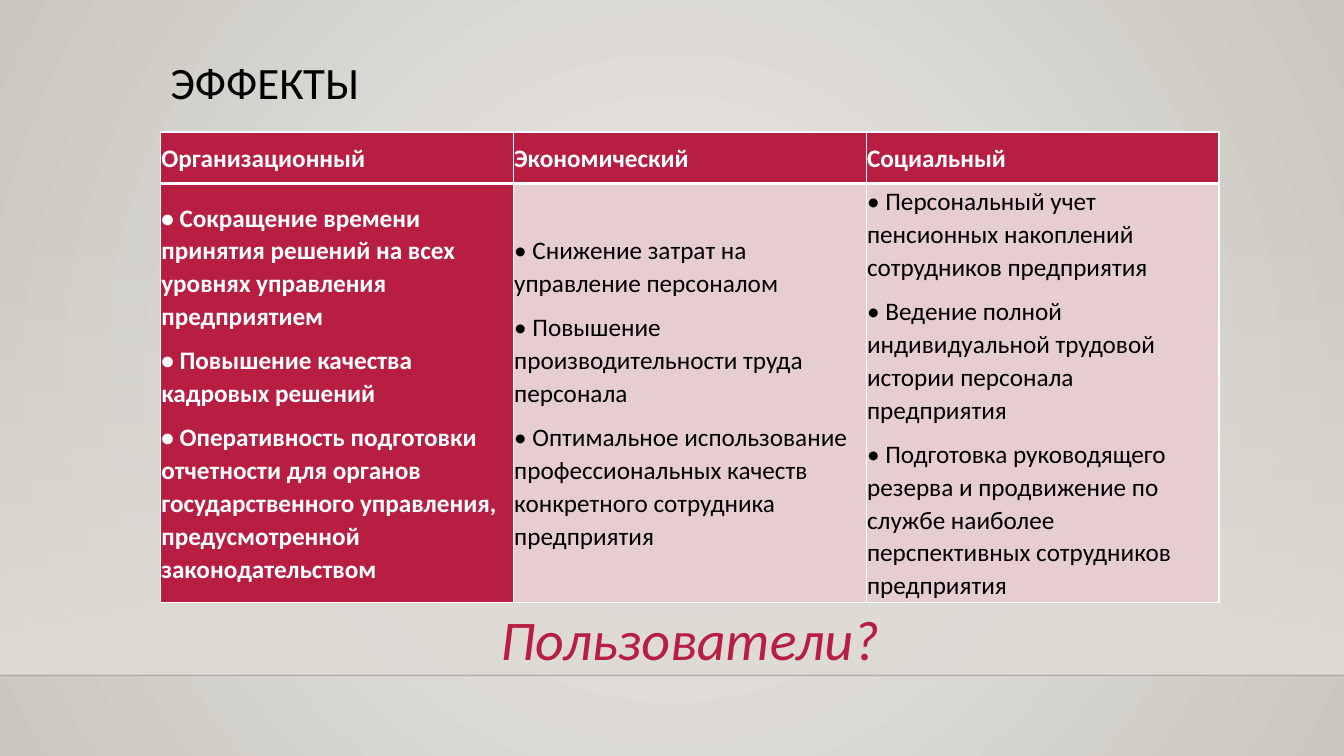
from dataclasses import dataclass

from lxml import etree
from pptx import Presentation
from pptx.dml.color import RGBColor
from pptx.enum.shapes import MSO_CONNECTOR, MSO_SHAPE
from pptx.enum.text import MSO_ANCHOR, MSO_AUTO_SIZE, PP_ALIGN
from pptx.oxml import parse_xml
from pptx.oxml.ns import nsdecls, qn
from pptx.util import Inches, Pt

CRIMSON = RGBColor(0xB7, 0x1E, 0x42)
ROSE = RGBColor(0xE6, 0xCD, 0xCF)
WHITE = RGBColor(0xFF, 0xFF, 0xFF)
BLACK = RGBColor(0, 0, 0)
FLOOR_LINE = RGBColor(0, 0, 1)
SAND = RGBColor(0xDF, 0xDB, 0xD5)
CENTRE_GREY = RGBColor(0xEC, 0xEA, 0xE7)
EDGE_GREY = RGBColor(0xCA, 0xC7, 0xC1)
FONT = "Calibri"
LEFT, WIDTH = 1.59, 10.5
ROW_HEIGHTS = (0.51, 3.94)


@dataclass
class Effect:
    name: str
    points: tuple[str, ...]
    fill: RGBColor = ROSE
    color: RGBColor = BLACK
    bold: bool = False


EFFECTS = (
    Effect("Организационный", (
        "Сокращение времени принятия решений на всех уровнях управления предприятием",
        "Повышение качества кадровых решений",
        "Оперативность подготовки отчетности для органов государственного управления, "
        "предусмотренной законодательством",
    ), CRIMSON, WHITE, True),
    Effect("Экономический", (
        "Снижение затрат на управление персоналом",
        "Повышение производительности труда персонала",
        "Оптимальное использование профессиональных качеств конкретного сотрудника предприятия",
    )),
    Effect("Социальный", (
        "Персональный учет пенсионных накоплений сотрудников предприятия",
        "Ведение полной индивидуальной трудовой истории персонала предприятия",
        "Подготовка руководящего резерва и продвижение по службе наиболее "
        "перспективных сотрудников предприятия",
    )),
)


def style_text(frame, size: float, color: RGBColor, spacing: float,
               bold: bool = False, italic: bool = False, after: float = 0) -> None:
    for para in frame.paragraphs:
        para.line_spacing = spacing
        para.space_before = Pt(0)
        para.space_after = Pt(after)
        for span in para.runs:
            font = span.font
            font.name, font.size, font.bold, font.italic = FONT, Pt(size), bold, italic
            font.color.rgb = color


def set_gradient(fill, start: RGBColor, end: RGBColor, direction: str,
                 start_alpha: int = 100) -> None:
    fill.gradient()
    gradient = fill._fill._gradFill
    gradient.getparent().replace(gradient, parse_xml(
        f'<a:gradFill {nsdecls("a")} rotWithShape="1"><a:gsLst>'
        f'<a:gs pos="0"><a:srgbClr val="{start}"><a:alpha val="{start_alpha * 1000}"/>'
        f'</a:srgbClr></a:gs><a:gs pos="100000"><a:srgbClr val="{end}"/></a:gs>'
        f'</a:gsLst>{direction}</a:gradFill>'))


def draw_backdrop(page) -> None:
    set_gradient(page.background.fill, CENTRE_GREY, EDGE_GREY,
                 '<a:path path="circle"><a:fillToRect l="50000" t="50000" '
                 'r="50000" b="50000"/></a:path>')
    wall = page.shapes.add_shape(MSO_SHAPE.RECTANGLE, 0, Inches(2.21),
                                 Inches(13.33), Inches(4.49))
    wall.shadow.inherit = False
    wall.line.fill.background()
    set_gradient(wall.fill, SAND, SAND, '<a:lin ang="5400000" scaled="0"/>', 0)

    floor = page.shapes.add_connector(MSO_CONNECTOR.STRAIGHT, 0, Inches(6.7),
                                      Inches(13.33), Inches(6.7))
    floor.line.width = Pt(1)
    floor.line.color.rgb = FLOOR_LINE
    properties = floor._element.spPr
    color = properties.find(".//" + qn("a:srgbClr"))
    etree.SubElement(color, qn("a:alpha")).set("val", "20000")
    etree.SubElement(properties, qn("a:effectLst"))


def set_borders(cell, top: float, bottom: float) -> None:
    properties = cell._tc.get_or_add_tcPr()
    widths = {"lnL": 1, "lnR": 1, "lnT": top, "lnB": bottom}
    for index, (side, width) in enumerate(widths.items()):
        properties.insert(index, parse_xml(
            f'<a:{side} {nsdecls("a")} w="{Pt(width)}"><a:solidFill>'
            f'<a:srgbClr val="{WHITE}"/></a:solidFill></a:{side}>'))


def fill_cell(cell, text: str, fill: RGBColor, color: RGBColor, bold: bool) -> None:
    cell.text_frame.text = text
    cell.vertical_anchor = MSO_ANCHOR.MIDDLE
    cell.margin_left = cell.margin_right = Inches(0.01)
    cell.margin_top = cell.margin_bottom = Inches(0.01)
    cell.fill.solid()
    cell.fill.fore_color.rgb = fill
    style_text(cell.text_frame, 18, color, 1.07, bold, after=8)


def draw_table(page) -> None:
    table = page.shapes.add_table(len(ROW_HEIGHTS), len(EFFECTS), Inches(LEFT), Inches(1.31),
                                  Inches(WIDTH), Inches(sum(ROW_HEIGHTS))).table
    for row, height in zip(table.rows, ROW_HEIGHTS):
        row.height = Inches(height)
    for column, effect in enumerate(EFFECTS):
        table.columns[column].width = Inches(WIDTH / len(EFFECTS))
        header, body = table.cell(0, column), table.cell(1, column)
        fill_cell(header, effect.name, CRIMSON, WHITE, True)
        set_borders(header, top=1, bottom=3)
        points = "\n".join(f"• {point}" for point in effect.points)
        fill_cell(body, points, effect.fill, effect.color, effect.bold)
        set_borders(body, top=3, bottom=1)


def draw_title(page) -> None:
    title = page.shapes.title
    title.left, title.top = Inches(LEFT), Inches(0.55)
    title.width, title.height = Inches(WIDTH), Inches(0.76)
    title.text_frame.text = "ЭФФЕКТЫ"
    title.text_frame.vertical_anchor = MSO_ANCHOR.TOP
    title.text_frame.paragraphs[0].alignment = PP_ALIGN.LEFT
    style_text(title.text_frame, 32, BLACK, 0.9)


def draw_question(page) -> None:
    box = page.shapes.add_textbox(Inches(LEFT), Inches(5.88), Inches(WIDTH), Inches(0.8))
    frame = box.text_frame
    frame.text = "Пользователи?"
    frame.word_wrap = True
    frame.auto_size = MSO_AUTO_SIZE.SHAPE_TO_FIT_TEXT
    frame.paragraphs[0].alignment = PP_ALIGN.CENTER
    style_text(frame, 40, CRIMSON, 1.1, italic=True)


def main() -> None:
    deck = Presentation()
    deck.slide_width, deck.slide_height = Inches(13.33), Inches(7.5)
    page = deck.slides.add_slide(deck.slide_layouts[5])
    draw_backdrop(page)
    draw_title(page)
    draw_table(page)
    draw_question(page)
    deck.save("out.pptx")


if __name__ == "__main__":
    main()
